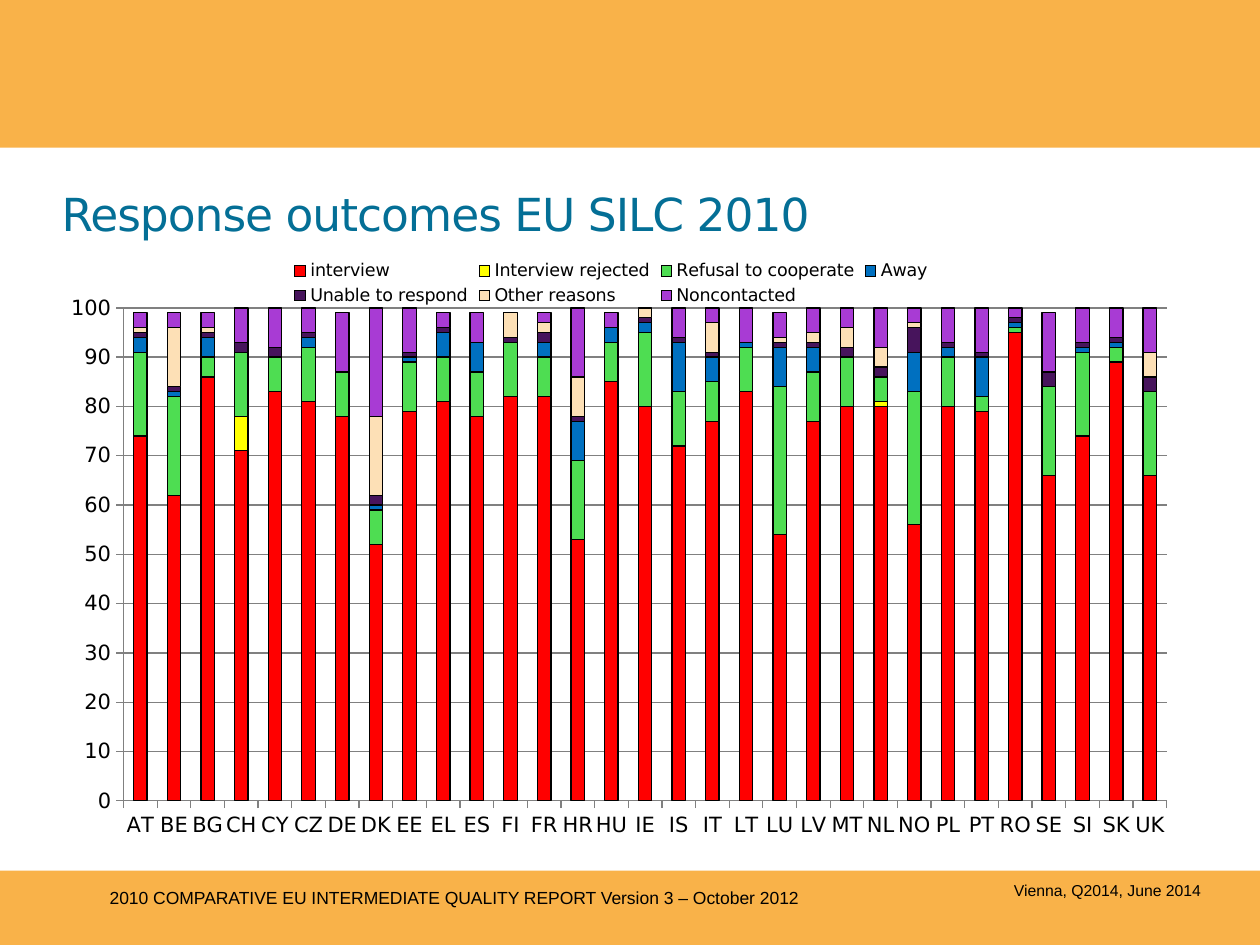
import pptx
import pptx.chart.data
import pptx.dml.color
import pptx.enum.chart
import pptx.enum.shapes
import pptx.enum.text
import pptx.oxml.ns
import pptx.util
from lxml import etree

Cm, Pt = pptx.util.Cm, pptx.util.Pt
qn = pptx.oxml.ns.qn
Kind = pptx.enum.chart

WIDE, HIGH = 25.4, 19.05
TITLE = "Response outcomes EU SILC 2010"
NOTES = [  # text, size name, box in cm
    ("Vienna, Q2014, June 2014", "place", (20.19, 17.63, 5.21, 0.66)),
    ("2010 COMPARATIVE EU INTERMEDIATE QUALITY REPORT Version 3 – October 2012",
     "report", (1.96, 17.75, 15.75, 0.69)),
]
BANDS = [(0, 0, WIDE, 2.98), (0, 17.55, WIDE, 1.5)]
TITLE_BOX = (0.99, 3.51, 22.86, 1.57)
CHART_BOX = (0.89, 4.98, 22.86, 12.27)
PLOT = {"x": 0.07, "y": 0.1, "w": 0.92, "h": 0.81}  # shares of the chart

LANDS = ("AT BE BG CH CY CZ DE DK EE EL ES FI FR HR HU IE IS IT LT LU LV "
         "MT NL NO PL PT RO SE SI SK UK").split()
SERIES = [  # name, colour, percent by land
    ("interview", "FF0000",
     (74, 62, 86, 71, 83, 81, 78, 52, 79, 81, 78, 82, 82, 53, 85, 80, 72, 77,
      83, 54, 77, 80, 80, 56, 80, 79, 95, 66, 74, 89, 66)),
    ("Interview rejected", "FFFF00",
     (0, 0, 0, 7, 0, 0, 0, 0, 0, 0, 0, 0, 0, 0, 0, 0, 0, 0,
      0, 0, 0, 0, 1, 0, 0, 0, 0, 0, 0, 0, 0)),
    ("Refusal to cooperate", "4EDD52",
     (17, 20, 4, 13, 7, 11, 9, 7, 10, 9, 9, 11, 8, 16, 8, 15, 11, 8,
      9, 30, 10, 10, 5, 27, 10, 3, 1, 18, 17, 3, 17)),
    ("Away", "0070C0",
     (3, 1, 4, 0, 0, 2, 0, 1, 1, 5, 6, 0, 3, 8, 3, 2, 10, 5,
      1, 8, 5, 0, 0, 8, 2, 8, 1, 0, 1, 1, 0)),
    ("Unable to respond", "47145C",
     (1, 1, 1, 2, 2, 1, 0, 2, 1, 1, 0, 1, 2, 1, 0, 1, 1, 1,
      0, 1, 1, 2, 2, 5, 1, 1, 1, 3, 1, 1, 3)),
    ("Other reasons", "FDE0B6",
     (1, 12, 1, 0, 0, 0, 0, 16, 0, 0, 0, 5, 2, 8, 0, 2, 0, 6,
      0, 1, 2, 4, 4, 1, 0, 0, 0, 0, 0, 0, 5)),
    ("Noncontacted", "A83BD4",
     (3, 3, 3, 7, 8, 5, 12, 22, 10, 3, 6, 0, 2, 14, 3, 0, 6, 3,
      7, 5, 6, 4, 8, 3, 7, 9, 2, 12, 7, 6, 9)),
]

THEME = {
    "font": {"head": "DejaVu Sans", "note": "Arial"},
    "size": {"title": 26, "axis": 12, "legend": 10, "report": 10, "place": 9},
    "color": {"band": "F9B249", "title": "046F96", "text": "000000",
              "edge": "000000", "grid": "808080", "page": "FFFFFF"},
}


def rgb(name):
    """Colour from a theme name or a hex value."""
    return pptx.dml.color.RGBColor.from_string(THEME["color"].get(name, name))


def put(obj, **vals):
    for key, val in vals.items():
        setattr(obj, key, val)


def paint(fill, name):
    fill.solid()
    fill.fore_color.rgb = rgb(name)


def style(font, face, size, color="text"):
    put(font, name=THEME["font"][face], size=Pt(THEME["size"][size]), bold=False)
    font.color.rgb = rgb(color)


def cms(box):
    return [Cm(n) for n in box]


def add_band(slide, box):
    band = slide.shapes.add_shape(
        pptx.enum.shapes.MSO_SHAPE.RECTANGLE, *cms(box))
    band.shadow.inherit = False
    paint(band.fill, "band")
    band.line.fill.background()


def add_title(slide):
    title = slide.shapes.title
    put(title, **dict(zip(("left", "top", "width", "height"), cms(TITLE_BOX))))
    paint(title.fill, "page")
    frame = title.text_frame
    frame.text = TITLE
    put(frame, word_wrap=True,
        auto_size=pptx.enum.text.MSO_AUTO_SIZE.NONE,
        vertical_anchor=pptx.enum.text.MSO_ANCHOR.MIDDLE)
    par = frame.paragraphs[0]
    par.alignment = pptx.enum.text.PP_ALIGN.LEFT
    style(par.runs[0].font, "head", "title", "title")
    par.runs[0].font._element.set("spc", "-60")


def add_note(slide, text, size, box):
    frame = slide.shapes.add_textbox(*cms(box)).text_frame
    put(frame, word_wrap=True, text=text)
    style(frame.paragraphs[0].runs[0].font, "note", size)


def place_plot(chart):
    """Fix the inner plot area inside the chart."""
    area = chart._chartSpace.find(".//" + qn("c:plotArea"))
    old = area.find(qn("c:layout"))
    if old is not None:
        area.remove(old)
    layout = etree.Element(qn("c:layout"))
    area.insert(0, layout)
    manual = etree.SubElement(layout, qn("c:manualLayout"))
    parts = [("layoutTarget", "inner"), ("xMode", "edge"), ("yMode", "edge")]
    for tag, val in parts + list(PLOT.items()):
        etree.SubElement(manual, qn("c:" + tag)).set("val", str(val))


def add_chart(slide):
    data = pptx.chart.data.CategoryChartData(number_format="0")
    data.categories = LANDS
    for name, _, vals in SERIES:
        data.add_series(name, vals)
    chart = slide.shapes.add_chart(
        Kind.XL_CHART_TYPE.COLUMN_STACKED, *cms(CHART_BOX), data).chart
    put(chart, has_title=False, has_legend=True)
    style(chart.font, "head", "axis")
    put(chart.legend, position=Kind.XL_LEGEND_POSITION.TOP,
        include_in_layout=False)
    style(chart.legend.font, "head", "legend")
    plot = chart.plots[0]
    put(plot, vary_by_categories=False, overlap=100, gap_width=150)
    for series, (_, color, _) in zip(plot.series, SERIES):
        paint(series.format.fill, color)
        paint(series.format.line.fill, "edge")
        series.format.line.width = Pt(0.75)
    scale = chart.value_axis
    put(scale, minimum_scale=0, maximum_scale=100, major_unit=10,
        has_major_gridlines=True)
    for part in (scale, chart.category_axis, scale.major_gridlines):
        paint(part.format.line.fill, "grid")
        part.format.line.width = Pt(0.75)
    for axis in (scale, chart.category_axis):
        put(axis, major_tick_mark=Kind.XL_TICK_MARK.OUTSIDE,
            minor_tick_mark=Kind.XL_TICK_MARK.NONE)
        style(axis.tick_labels.font, "head", "axis")
    place_plot(chart)


def main():
    deck = pptx.Presentation()
    put(deck, slide_width=Cm(WIDE), slide_height=Cm(HIGH))
    slide = deck.slides.add_slide(deck.slide_layouts[5])
    for box in BANDS:
        add_band(slide, box)
    add_title(slide)
    add_chart(slide)
    for note in NOTES:
        add_note(slide, *note)
    deck.save("out.pptx")


if __name__ == "__main__":
    main()
